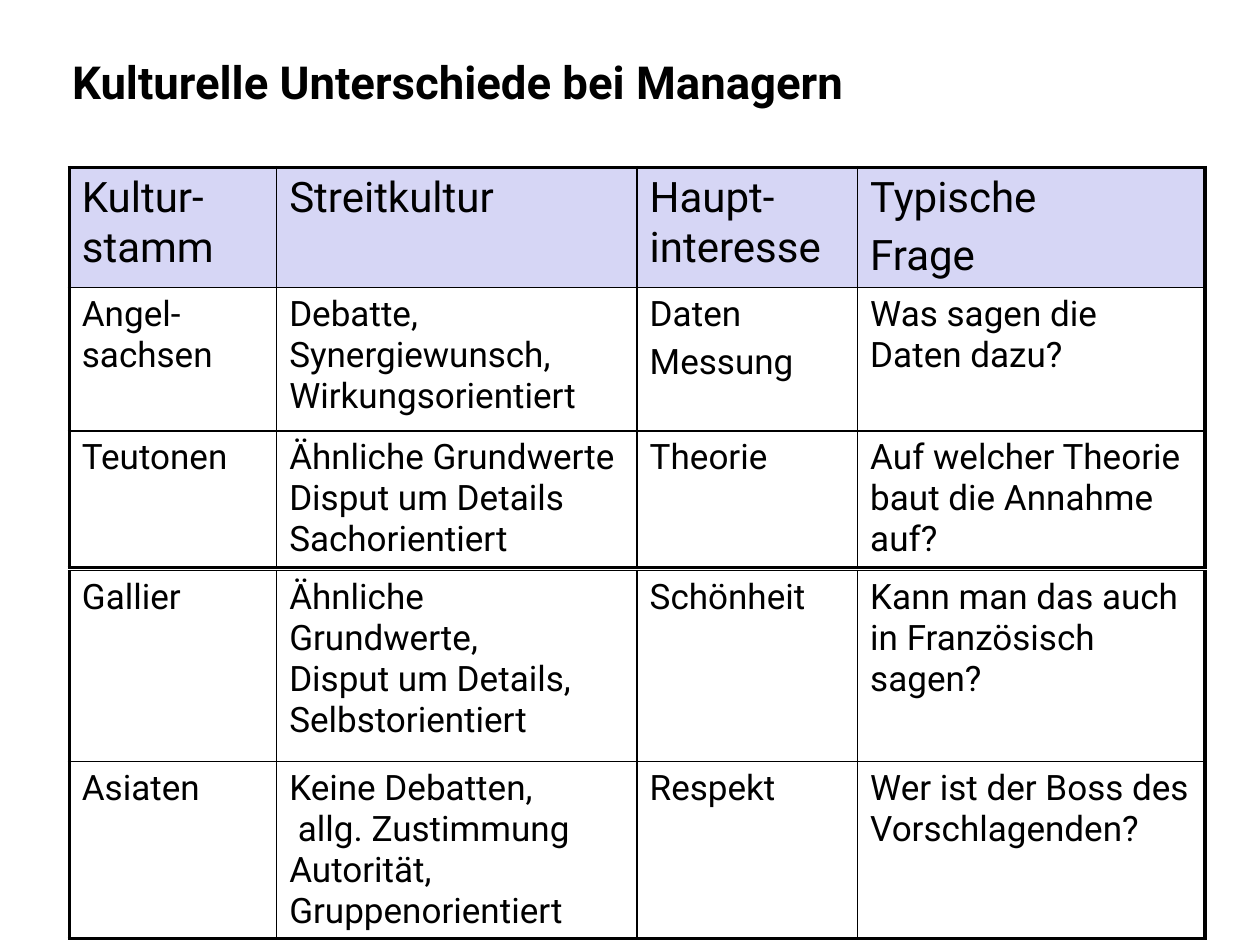
import pptx
import pptx.dml.color
import pptx.enum.text
import pptx.oxml.ns
import pptx.util
from lxml import etree

Pt = pptx.util.Pt
qn = pptx.oxml.ns.qn

THICK, THIN = 2.25, 1
DEBATE_COLUMN = 1  # its lines follow each other without a gap


def colour(value):
    return pptx.dml.color.RGBColor.from_string(value)


def apply(target, values):
    for name, value in values.items():
        setattr(target, name, value)


class SlideBuilder:
    font = "Roboto"
    ink = "000000"
    header_fill = "D6D6F5"
    header_size, body_size, title_size = 24, 20, 26
    left = 39.6
    columns = (118.5, 206, 126, 198.5)

    def __init__(self, page):
        self.page = page

    def add_text(self, frame, text, size, gap=0, bold=False):
        """Fill a text frame, one paragraph for each line."""
        for number, line in enumerate(text.split("\n")):
            para = frame.paragraphs[0] if number == 0 else frame.add_paragraph()
            apply(para, {
                "alignment": pptx.enum.text.PP_ALIGN.LEFT,
                "space_before": Pt(gap if number else 0),
            })
            span = para.add_run()
            span.text = line
            apply(span.font, {"name": self.font, "size": Pt(size), "bold": bold})
            span.font.color.rgb = colour(self.ink)

    def title(self, text, left, top, width, height):
        box = self.page.shapes.title
        apply(box, {"left": Pt(left), "top": Pt(top),
                    "width": Pt(width), "height": Pt(height)})
        apply(box.text_frame, {
            "word_wrap": True,
            "auto_size": pptx.enum.text.MSO_AUTO_SIZE.NONE,
            "vertical_anchor": pptx.enum.text.MSO_ANCHOR.MIDDLE,
        })
        self.add_text(box.text_frame, text, self.title_size, bold=True)

    def borders(self, cell, widths):
        """Draw the cell's lines; they must come before its fill."""
        properties = cell._tc.get_or_add_tcPr()
        for position, (side, width) in enumerate(widths.items()):
            line = etree.Element(qn(f"a:ln{side}"), w=str(Pt(width)))
            solid = etree.SubElement(line, qn("a:solidFill"))
            etree.SubElement(solid, qn("a:srgbClr"), val=self.ink)
            properties.insert(position, line)

    def table(self, rows, top, heights, header=False):
        frame = self.page.shapes.add_table(
            len(rows), len(self.columns), Pt(self.left), Pt(top),
            Pt(sum(self.columns)), Pt(sum(heights)))
        grid = frame.table
        apply(grid, {"first_row": False, "horz_banding": False})
        for column, width in zip(grid.columns, self.columns):
            column.width = Pt(width)
        last_row, last_column = len(rows) - 1, len(self.columns) - 1

        for r, texts in enumerate(rows):
            grid.rows[r].height = Pt(heights[r])
            is_header = header and r == 0
            size = self.header_size if is_header else self.body_size
            for c, text in enumerate(texts):
                cell = grid.cell(r, c)
                if is_header:
                    cell.fill.solid()
                    cell.fill.fore_color.rgb = colour(self.header_fill)
                else:
                    cell.fill.background()
                gap = 0 if c == DEBATE_COLUMN else size * 0.2
                self.add_text(cell.text_frame, text, size, gap)
                self.borders(cell, {
                    "L": THICK if c == 0 else THIN,
                    "R": THICK if c == last_column else THIN,
                    "T": THICK if is_header else THIN,
                    "B": THICK if r == last_row else THIN,
                })


WESTERN_ROWS = [
    ("Kultur-stamm", "Streitkultur", "Haupt-interesse", "Typische\nFrage"),
    ("Angel-sachsen", "Debatte,\nSynergiewunsch,\nWirkungsorientiert",
     "Daten\nMessung", "Was sagen die Daten dazu?"),
    ("Teutonen", "Ähnliche Grundwerte\nDisput um Details\nSachorientiert",
     "Theorie", "Auf welcher Theorie baut die Annahme auf?"),
]
OTHER_ROWS = [
    ("Gallier", "Ähnliche\nGrundwerte,\nDisput um Details,\nSelbstorientiert",
     "Schönheit", "Kann man das auch in Französisch sagen?"),
    ("Asiaten", "Keine Debatten,\n allg. Zustimmung\nAutorität,\nGruppenorientiert",
     "Respekt", "Wer ist der Boss des Vorschlagenden?"),
]


def main():
    deck = pptx.Presentation()
    apply(deck, {"slide_width": Pt(720), "slide_height": Pt(540)})
    title_only = deck.slide_layouts[5]
    builder = SlideBuilder(deck.slides.add_slide(title_only))

    # Heading
    builder.title("Kulturelle Unterschiede bei Managern", 34, 20, 632, 52.5)

    # Two tables, one right below the other
    builder.table(WESTERN_ROWS, 95.75, (68, 82, 78), header=True)
    builder.table(OTHER_ROWS, 326, (109, 101))

    deck.save("out.pptx")


if __name__ == "__main__":
    main()
